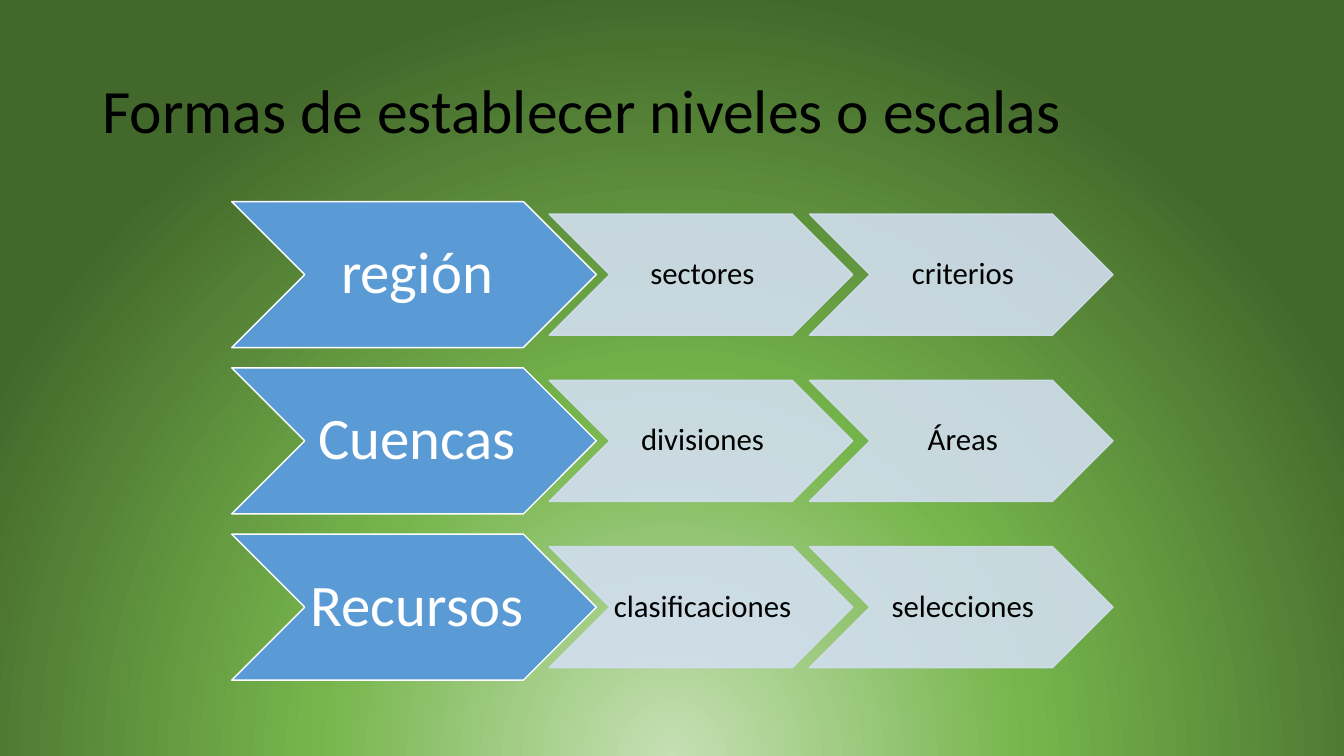
import pptx
import pptx.util
import pptx.dml.color
import pptx.enum.shapes
import pptx.enum.text
import pptx.oxml
import pptx.oxml.ns

Cm = pptx.util.Cm
Pt = pptx.util.Pt
ALIGN = pptx.enum.text.PP_ALIGN

ROWS = [
    ("región", "sectores", "criterios"),
    ("Cuencas", "divisiones", "Áreas"),
    ("Recursos", "clasificaciones", "selecciones"),
]
STOPS = [(0, "C5E0B4"), (46, "76B54C"), (100, "43682B")]
HEAD = {"size": (9.19, 3.68), "fill": "5B9BD5", "line": "FFFFFF",
        "font": "FFFFFF", "points": 42, "alpha": 100, "inset": 0.15}
STEP = {"size": (7.65, 3.05), "fill": "D2DEEF", "line": "D2DEEF",
        "font": "000000", "points": 22, "alpha": 90, "inset": 0.08}
PITCH = 4.19
LAPS = (1.19, 1.09)


def color(code):
    return pptx.dml.color.RGBColor.from_string(code)


def backdrop(slide):
    """Fill the background with a round gradient centred below the slide."""
    stops = "".join(
        f'<a:gs pos="{pos * 1000}"><a:srgbClr val="{code}"/></a:gs>'
        for pos, code in STOPS)
    node = pptx.oxml.parse_xml(
        f'<p:bg {pptx.oxml.ns.nsdecls("p", "a")}><p:bgPr>'
        f'<a:gradFill rotWithShape="1"><a:gsLst>{stops}</a:gsLst>'
        '<a:path path="circle"><a:fillToRect l="50000" t="130000" '
        'r="50000" b="-30000"/></a:path></a:gradFill>'
        '<a:effectLst/></p:bgPr></p:bg>')
    slide._element.cSld.insert(0, node)


def write(shape, text, points, code, align, frame):
    """Put one line of text in the shape; frame holds text frame values."""
    body = shape.text_frame
    values = {"vertical_anchor": pptx.enum.text.MSO_ANCHOR.MIDDLE, **frame}
    for name, value in values.items():
        setattr(body, name, value)
    line = body.paragraphs[0]
    line.alignment = align
    line.line_spacing = 0.9
    run = line.add_run()
    run.text = text
    for name, value in {"name": "Calibri", "size": Pt(points)}.items():
        setattr(run.font, name, value)
    run.font.color.rgb = color(code)


def title(slide, left, top, width, height):
    box = slide.shapes.add_textbox(Cm(left), Cm(top), Cm(width), Cm(height))
    write(box, "Formas de establecer niveles o escalas", 44, "000000",
          ALIGN.LEFT, {"word_wrap": True})


def chevron(slide, left, middle, text, style):
    width, height = style["size"]
    shape = slide.shapes.add_shape(
        pptx.enum.shapes.MSO_SHAPE.CHEVRON, Cm(left),
        Cm(middle - height / 2), Cm(width), Cm(height))
    shape.shadow.inherit = False
    shape.fill.solid()
    shape.fill.fore_color.rgb = color(style["fill"])
    shape.line.color.rgb = color(style["line"])
    shape.line.width = Pt(1)
    if style["alpha"] < 100:
        for tint in shape._element.spPr.iter(pptx.oxml.ns.qn("a:srgbClr")):
            alpha = tint.makeelement(pptx.oxml.ns.qn("a:alpha"),
                                     {"val": str(style["alpha"] * 1000)})
            tint.append(alpha)
    write(shape, text, style["points"], style["font"], ALIGN.CENTER,
          {"word_wrap": False, "margin_left": Cm(style["inset"]),
           "margin_right": 0, "margin_top": Cm(0.05),
           "margin_bottom": Cm(0.05)})


def chain(slide, left, middle, texts):
    """Draw one row: a large chevron, then small ones tucked behind it."""
    for text, style, lap in zip(texts, (HEAD, STEP, STEP), (*LAPS, 0)):
        chevron(slide, left, middle, text, style)
        left += style["size"][0] - lap


def levels(slide, left, top):
    for row, texts in enumerate(ROWS):
        chain(slide, left, top + HEAD["size"][1] / 2 + row * PITCH, texts)


def main():
    deck = pptx.Presentation()
    deck.slide_width, deck.slide_height = Cm(33.87), Cm(19.05)
    slide = deck.slides.add_slide(deck.slide_layouts[6])
    backdrop(slide)
    title(slide, 2.33, 1.01, 29.21, 3.68)
    levels(slide, 5.84, 5.08)
    deck.save("out.pptx")


if __name__ == "__main__":
    main()
